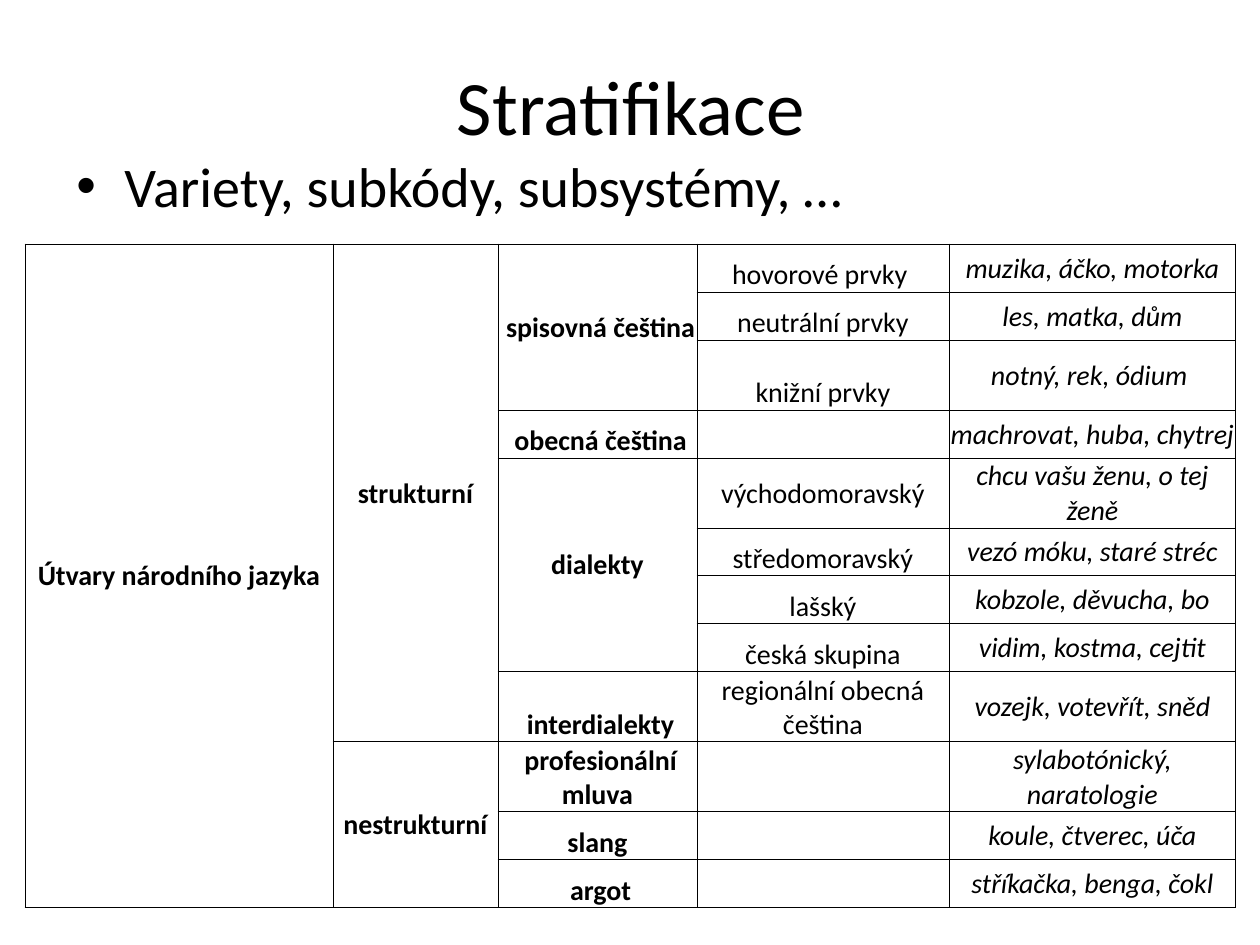
from lxml import etree
from pptx import Presentation
from pptx import util as u
from pptx.dml.color import RGBColor
from pptx.enum import text
from pptx.oxml import ns

PX = u.Inches(1) / 126
FONT = "Calibri"
BLACK = RGBColor(0, 0, 0)
MIDDLE, BOTTOM = text.MSO_ANCHOR.MIDDLE, text.MSO_ANCHOR.BOTTOM
CENTER, LEFT = text.PP_ALIGN.CENTER, text.PP_ALIGN.LEFT

COLUMN_WIDTHS = [308, 165, 199, 252, 287]
ROW_HEIGHT, TALL_ROW_HEIGHT = 48, 70
TALL_ROWS = {2, 4, 8, 9}
CELL_MARGINS = {"margin_left": 1, "margin_right": 1, "margin_top": 1, "margin_bottom": 0}

# Each entry is first row, row span, anchor, wording.
LANGUAGE = [(0, 12, MIDDLE, "Útvary národního jazyka")]
STRUCTURE = [(0, 9, MIDDLE, "strukturní"), (9, 3, MIDDLE, "nestrukturní")]
VARIETIES = [
    (0, 3, MIDDLE, " spisovná čeština"),
    (3, 1, BOTTOM, " obecná čeština"),
    (4, 4, MIDDLE, "dialekty"),
    (8, 1, BOTTOM, " interdialekty"),
    (9, 1, BOTTOM, " profesionální mluva"),
    (10, 1, BOTTOM, " slang "),
    (11, 1, BOTTOM, " argot"),
]
SUBGROUPS = [
    (0, 1, BOTTOM, "hovorové prvky "),
    (1, 1, BOTTOM, "neutrální prvky"),
    (2, 1, BOTTOM, "knižní prvky"),
    (4, 1, MIDDLE, "východomoravský"),
    (5, 1, BOTTOM, "středomoravský"),
    (6, 1, BOTTOM, "lašský"),
    (7, 1, BOTTOM, "česká skupina"),
    (8, 1, BOTTOM, "regionální obecná čeština"),
]
EXAMPLES = [
    (row, 1, MIDDLE, wording)
    for row, wording in enumerate([
        "muzika, áčko, motorka", "les, matka, dům", "notný, rek, ódium ",
        "machrovat, huba, chytrej", "chcu vašu ženu, o tej ženě",
        "vezó móku, staré stréc", "kobzole, děvucha, bo", "vidim, kostma, cejtit",
        "vozejk, votevřít, sněd", "sylabotónický, naratologie",
        "koule, čtverec, úča", "stříkačka, benga, čokl",
    ])
]
COLUMNS = [
    (LANGUAGE, {"bold": True}),
    (STRUCTURE, {"bold": True}),
    (VARIETIES, {"bold": True}),
    (SUBGROUPS, {}),
    (EXAMPLES, {"italic": True}),
]


def px(length):
    return u.Emu(round(length * PX))


def set_format(target, values):
    for name, value in values.items():
        setattr(target, name, value)


def write(frame, wording, size, alignment=CENTER, **style):
    paragraph = frame.paragraphs[0]
    paragraph.alignment = alignment
    run = paragraph.add_run()
    run.text = wording
    set_format(run.font, {"name": FONT, "size": u.Pt(size), "bold": False, "italic": False, **style})
    run.font.color.rgb = BLACK
    return paragraph


def add_text(slide, box, wording, size, anchor, alignment):
    shape = slide.shapes.add_textbox(*map(px, box))
    set_format(shape.text_frame, {"word_wrap": True, "vertical_anchor": anchor})
    return write(shape.text_frame, wording, size, alignment)


def add_bullet(paragraph, indent):
    properties = paragraph._p.get_or_add_pPr()
    properties.set("marL", str(px(indent)))
    properties.set("indent", str(-px(indent)))
    space = etree.SubElement(properties, ns.qn("a:spcBef"))
    etree.SubElement(space, ns.qn("a:spcPct"), val="20000")
    etree.SubElement(properties, ns.qn("a:buFont"), typeface="Arial")
    etree.SubElement(properties, ns.qn("a:buChar"), char="•")


def add_borders(cell):
    properties = cell._tc.get_or_add_tcPr()
    for side in ("a:lnL", "a:lnR", "a:lnT", "a:lnB"):
        line = etree.SubElement(properties, ns.qn(side), w=str(u.Pt(0.5)))
        fill = etree.SubElement(line, ns.qn("a:solidFill"))
        etree.SubElement(fill, ns.qn("a:srgbClr"), val=str(BLACK))


def add_variety_table(slide, left, top):
    heights = [TALL_ROW_HEIGHT if row in TALL_ROWS else ROW_HEIGHT for row in range(12)]
    box = (left, top, sum(COLUMN_WIDTHS), sum(heights))
    table = slide.shapes.add_table(len(heights), len(COLUMNS), *map(px, box)).table
    set_format(table, {"first_row": False, "horz_banding": False})
    for column, width in zip(table.columns, COLUMN_WIDTHS):
        column.width = px(width)
    for row, height in zip(table.rows, heights):
        row.height = px(height)
    for cell in table.iter_cells():
        set_format(cell, {name: px(margin) for name, margin in CELL_MARGINS.items()})
        add_borders(cell)
        cell.fill.background()
    for column, (entries, style) in enumerate(COLUMNS):
        for row, span, anchor, wording in entries:
            cell = table.cell(row, column)
            if span > 1:
                cell.merge(table.cell(row + span - 1, column))
            cell.vertical_anchor = anchor
            write(cell.text_frame, wording, 16, **style)


def main():
    presentation = Presentation()
    set_format(presentation, {"slide_width": u.Inches(10), "slide_height": u.Inches(7.5)})
    slide = presentation.slides.add_slide(presentation.slide_layouts[6])
    add_text(slide, (64, 26, 1134, 158), "Stratifikace", 44, MIDDLE, CENTER)
    subtitle = add_text(slide, (64, 145, 1134, 103), "Variety, subkódy, subsystémy, …",
                        32, text.MSO_ANCHOR.TOP, LEFT)
    add_bullet(subtitle, 48)
    add_variety_table(slide, 25, 244)
    presentation.save("out.pptx")


if __name__ == "__main__":
    main()
